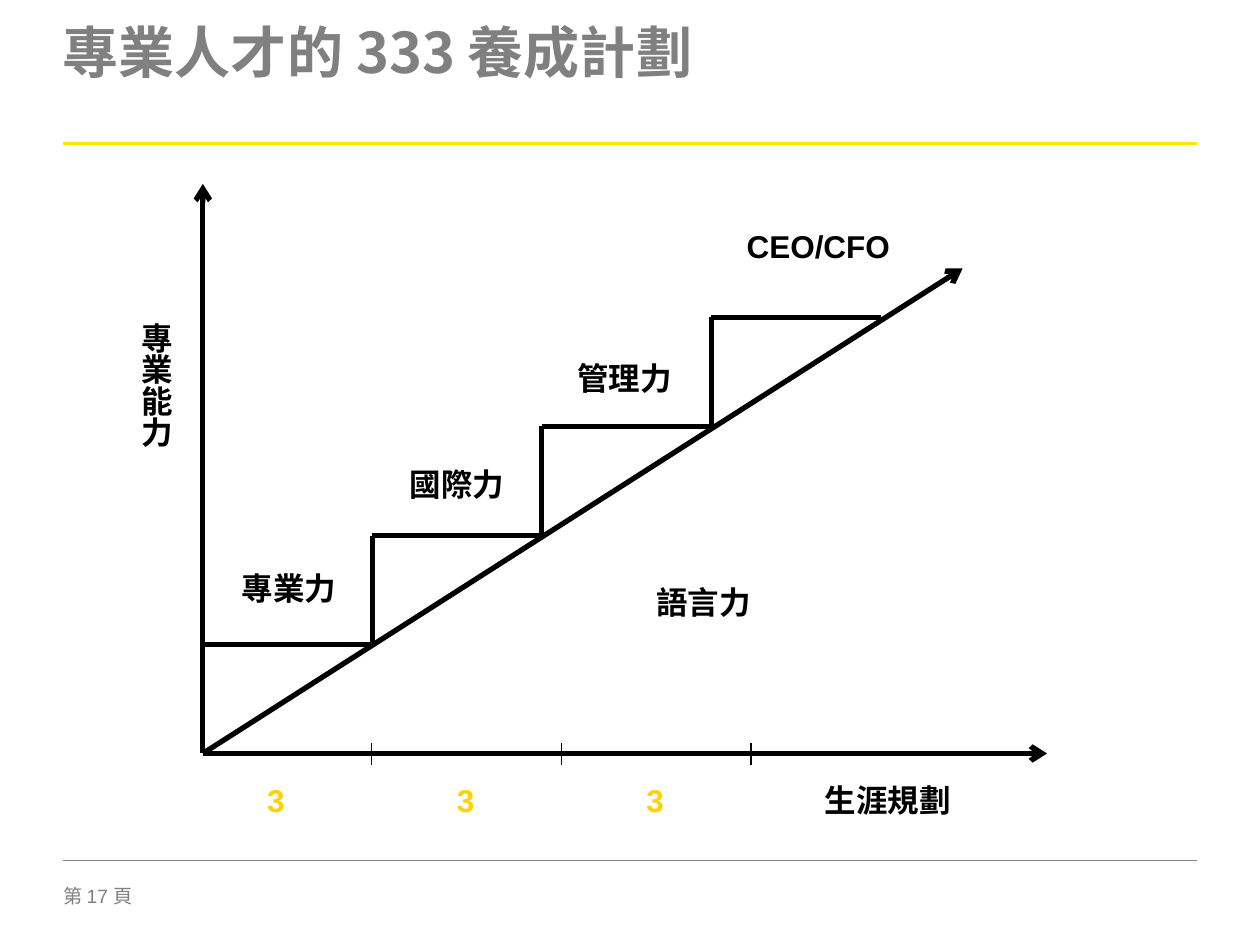
from dataclasses import dataclass

import pptx
import pptx.dml.color
import pptx.enum.shapes
import pptx.enum.text
import pptx.oxml.ns
import pptx.util
from lxml import etree

BLACK = pptx.dml.color.RGBColor(0x00, 0x00, 0x00)
GRAY = pptx.dml.color.RGBColor(0x80, 0x80, 0x80)
RULE_YELLOW = pptx.dml.color.RGBColor(0xFF, 0xE6, 0x00)
YEAR_YELLOW = pptx.dml.color.RGBColor(0xFF, 0xD2, 0x00)
CJK = "Noto Sans CJK SC"
LATIN = "Arial"
CENTER = pptx.enum.text.PP_ALIGN.CENTER
LEFT = pptx.enum.text.PP_ALIGN.LEFT

# Slide grid: 100 columns by 75 rows of square cells
COLUMNS, ROWS = 100, 75
CELL = pptx.util.Inches(0.1)

# Staircase: every step has the same run and rise
ORIGIN_X, ORIGIN_Y = 16.1, 59.8
STEP_RUN, STEP_RISE = 13.45, 8.65
STEPS = 4
YEAR_SPAN = 15.05


@dataclass(frozen=True)
class Label:
    text: str
    left: float
    top: float
    width: float
    height: float
    font: str = CJK
    color: pptx.dml.color.RGBColor = BLACK
    size: float = 18
    bold: bool = True
    align: pptx.enum.text.PP_ALIGN = CENTER
    vertical: bool = False
    inset: bool = True


@dataclass(frozen=True)
class Stroke:
    x1: float
    y1: float
    x2: float
    y2: float
    color: pptx.dml.color.RGBColor = BLACK
    width: float = 3
    arrow: bool = False


def cells(count: float) -> int:
    return round(count * CELL)


def add_run(paragraph, text: str, label: Label, typeface: str) -> None:
    run = paragraph.add_run()
    run.text = text
    formats = {"name": typeface, "size": pptx.util.Pt(label.size), "bold": label.bold}
    for attribute, value in formats.items():
        setattr(run.font, attribute, value)
    run.font.color.rgb = label.color
    east_asian = etree.SubElement(run.font._element, pptx.oxml.ns.qn("a:ea"))
    east_asian.set("typeface", typeface)


def draw_label(shapes, label: Label):
    """Draw the label and return its paragraph."""
    box = shapes.add_textbox(*map(cells, (label.left, label.top, label.width, label.height)))
    frame = box.text_frame
    frame.word_wrap = True
    if not label.inset:
        for side in ("left", "top", "right", "bottom"):
            setattr(frame, f"margin_{side}", 0)
    if label.vertical:
        frame._txBody.bodyPr.set("vert", "eaVert")
    paragraph = frame.paragraphs[0]
    paragraph.alignment = label.align
    if label.text:
        add_run(paragraph, label.text, label, label.font)
    return paragraph


def draw_stroke(shapes, stroke: Stroke) -> None:
    line = shapes.add_connector(
        pptx.enum.shapes.MSO_CONNECTOR.STRAIGHT,
        *map(cells, (stroke.x1, stroke.y1, stroke.x2, stroke.y2)),
    )
    line.line.color.rgb = stroke.color
    line.line.width = pptx.util.Pt(stroke.width)
    if stroke.arrow:
        tail = etree.SubElement(line.line._get_or_add_ln(), pptx.oxml.ns.qn("a:tailEnd"))
        tail.set("type", "arrow")
    etree.SubElement(line._element.spPr, pptx.oxml.ns.qn("a:effectLst"))


def staircase() -> list[Stroke]:
    strokes = []
    for step in range(STEPS):
        x = ORIGIN_X + step * STEP_RUN
        base = ORIGIN_Y - step * STEP_RISE
        tread = base - STEP_RISE
        strokes.append(Stroke(x, tread, x + STEP_RUN, tread))
        if step:  # the vertical axis is the first riser
            strokes.append(Stroke(x, base, x, tread))
    return strokes


AXES = [
    Stroke(ORIGIN_X, ORIGIN_Y, ORIGIN_X, 14.6, arrow=True),
    Stroke(ORIGIN_X, ORIGIN_Y, 83.1, ORIGIN_Y, arrow=True),
    Stroke(ORIGIN_X, ORIGIN_Y, 76.4, 21.3, arrow=True),
]
ABILITIES = [
    Label("專業力", 16.7, 44.7, 12.5, 4.2),
    Label("國際力", 30, 36.4, 12.5, 4.2),
    Label("管理力", 43.3, 28, 12.5, 4.2),
    Label("CEO/CFO", 55.8, 17.5, 18.3, 5.8, font=LATIN),
    Label("語言力", 44.2, 45.8, 23.3, 5),
]
AXIS_NAMES = [
    Label("專業能力", 4.3, 24.6, 10.1, 16.8, align=LEFT, vertical=True),
    Label("生涯規劃", 61.7, 61.5, 17.5, 6.7),
]
TITLE = Label("專業人才的 333 養成計劃", 5, 2.2, 90, 9.4, color=GRAY, size=32,
              align=LEFT, inset=False)
PAGE_NUMBER = Label("", 5, 70.2, 7.9, 2.2, color=GRAY, size=11, bold=False,
                    align=LEFT, inset=False)


def main() -> None:
    deck = pptx.Presentation()
    deck.slide_width, deck.slide_height = COLUMNS * CELL, ROWS * CELL
    slide = deck.slides.add_slide(deck.slide_layouts[6])

    # Page frame: footer, rules and title
    page = draw_label(slide.shapes, PAGE_NUMBER)
    for text, typeface in (("第 ", CJK), ("17 ", LATIN), ("頁", CJK)):
        add_run(page, text, PAGE_NUMBER, typeface)
    draw_stroke(slide.shapes, Stroke(5, 11.4, 95, 11.4, RULE_YELLOW, 1.5))
    draw_stroke(slide.shapes, Stroke(5, 68.3, 95, 68.3, GRAY, 0.25))
    draw_label(slide.shapes, TITLE).line_spacing = 0.85

    # Career chart: axes, growth line and steps
    chart = slide.shapes.add_group_shape().shapes
    for stroke in AXES + staircase():
        draw_stroke(chart, stroke)
    for label in ABILITIES + AXIS_NAMES:
        draw_label(chart, label)

    # Three spans of three years
    for span in range(3):
        offset = span * YEAR_SPAN
        tick = 29.5 + offset
        draw_stroke(chart, Stroke(tick, 59, tick, 60.7, width=0.75))
        draw_label(chart, Label("3", 19.4 + offset, 61.5, 5, 5, LATIN, YEAR_YELLOW))

    deck.save("out.pptx")


if __name__ == "__main__":
    main()
